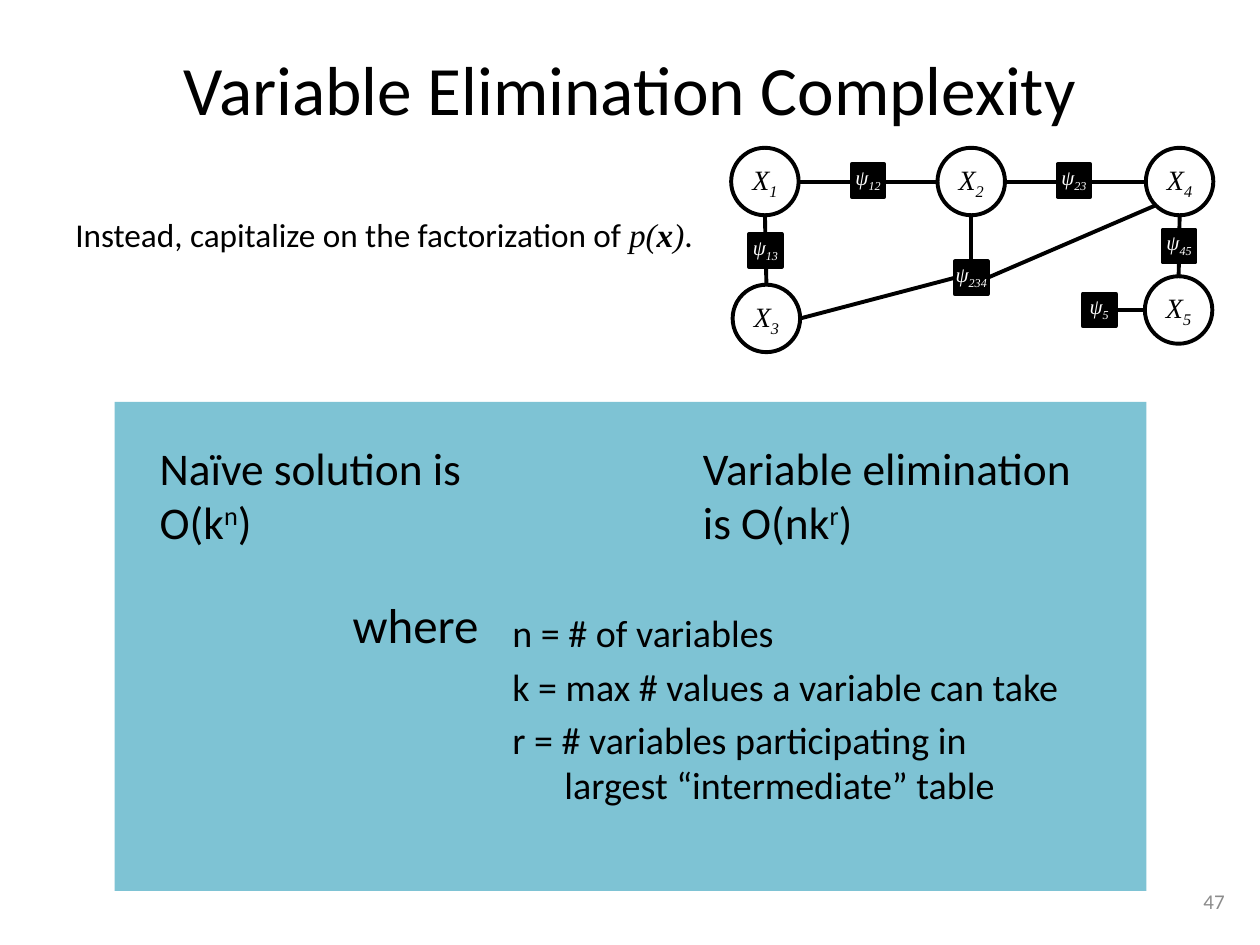
import dataclasses
import pptx
import pptx.util
import pptx.dml.color
import pptx.enum.shapes
import pptx.enum.text
import pptx.oxml

Cm = pptx.util.Cm
Pt = pptx.util.Pt
Kind = pptx.enum.shapes.MSO_SHAPE
Align = pptx.enum.text.PP_ALIGN
Anchor = pptx.enum.text.MSO_ANCHOR


@dataclasses.dataclass(frozen=True)
class Theme:
    sans: str = "Calibri"
    serif: str = "Times New Roman"
    ink: str = "000000"
    paper: str = "FFFFFF"
    panel: str = "7EC3D4"
    muted: str = "8C8C8C"
    title: float = 39.6
    claim: float = 25.9
    where: float = 28
    terms: float = 21.7
    lead: float = 19
    node: float = 16
    small: float = 12
    line: float = 2.25


THEME = Theme()
NODE, FACTOR = 1.36, 0.66
NODES = {"1": (15.42, 3.66), "2": (19.58, 3.66), "3": (15.45, 6.42),
         "4": (23.78, 3.66), "5": (23.76, 6.25)}
FACTORS = {"12": (17.5, 3.64), "23": (21.65, 3.64), "13": (15.43, 5.05),
           "45": (23.77, 4.96), "234": (19.58, 5.6), "5": (22.16, 6.25)}
SIDES = {"top": (0, -0.5), "bottom": (0, 0.5), "left": (-0.5, 0),
         "right": (0.5, 0), "corner": (-0.35, 0.35)}
LINKS = [("X1", "bottom", "X3", "top"), ("X1", "right", "X2", "left"),
         ("X2", "bottom", "ψ234", "top"), ("X2", "right", "X4", "left"),
         ("X4", "corner", "ψ234", "right"), ("X4", "bottom", "X5", "top"),
         ("X5", "left", "ψ5", "right"), ("ψ234", "left", "X3", "right")]


def color(code):
    return pptx.dml.color.RGBColor.from_string(code)


def style(font, size, ink=THEME.ink, face=THEME.sans):
    font.size, font.name = Pt(size), face
    font.color.rgb = color(ink)


def add_run(para, text, base=0):
    run = para.add_run()
    run.text = text
    if base:
        run._r.get_or_add_rPr().set("baseline", str(base * 1000))
    return run


def add_text(slide, box, size, ink=THEME.ink, align=Align.LEFT, anchor=Anchor.TOP):
    frame = slide.shapes.add_textbox(*map(Cm, box)).text_frame
    frame.word_wrap = True
    frame.vertical_anchor = anchor
    para = frame.paragraphs[0]
    para.alignment = align
    style(para.font, size, ink)
    return para


def add_shape(slide, kind, box, fill):
    shape = slide.shapes.add_shape(kind, *map(Cm, box))
    shape.shadow.inherit = False
    shape.fill.solid()
    shape.fill.fore_color.rgb = color(fill)
    shape.line.fill.background()
    return shape


def add_mark(slide, kind, spot, side, name, sub, size, fill, ink, anchor):
    x, y = spot
    shape = add_shape(slide, kind, (x - side / 2, y - side / 2, side, side), fill)
    shape.line.color.rgb = color(THEME.ink)
    shape.line.width = Pt(THEME.line)
    frame = shape.text_frame
    frame.margin_left = frame.margin_right = 0
    frame.margin_top = frame.margin_bottom = 0
    frame.word_wrap = False
    frame.vertical_anchor = anchor
    para = frame.paragraphs[0]
    para.alignment = Align.CENTER
    style(para.font, size, ink, THEME.serif)
    para.font.italic = True
    add_run(para, name)
    add_run(para, sub, -25)


def find_end(name, side):
    spots, size = (NODES, NODE) if name[0] == "X" else (FACTORS, FACTOR)
    x, y = spots[name[1:]]
    dx, dy = SIDES[side]
    return Cm(x + dx * size), Cm(y + dy * size)


def add_link(slide, head, head_side, tail, tail_side):
    link = slide.shapes.add_connector(
        pptx.enum.shapes.MSO_CONNECTOR.STRAIGHT,
        *find_end(head, head_side), *find_end(tail, tail_side))
    link.line.color.rgb = color(THEME.ink)
    link.line.width = Pt(THEME.line)
    link._element.spPr.append(pptx.oxml.parse_xml(
        '<a:effectLst xmlns:a="http://schemas.openxmlformats.org/drawingml/2006/main"/>'))


def add_graph(slide):
    for link in LINKS:
        add_link(slide, *link)
    for sub, spot in NODES.items():
        add_mark(slide, Kind.OVAL, spot, NODE, "X", sub, THEME.node,
                 THEME.paper, THEME.ink, Anchor.MIDDLE)
    for sub, spot in FACTORS.items():
        add_mark(slide, Kind.RECTANGLE, spot, FACTOR, "ψ", sub, THEME.small,
                 THEME.ink, THEME.paper, Anchor.TOP)


def add_claim(slide, left, text, power):
    para = add_text(slide, (left, 8.74, 8.56, 3.38), THEME.claim)
    add_run(para, text)
    add_run(para, power, 30)
    add_run(para, ")")


def add_lead(slide):
    para = add_text(slide, (1.27, 4.19, 13.11, 1.75), THEME.lead)
    add_run(para, "Instead, capitalize on the factorization of ")
    for text in ("p(", "x", ")"):
        font = add_run(para, text).font
        font.name, font.italic = THEME.serif, True
        font.bold = text == "x"
    add_run(para, ".")


def add_terms(slide):
    para = add_text(slide, (10.08, 12.17, 12.4, 4.57), THEME.terms)
    para.text = "n = # of variables"
    frame = para._parent
    for text in ("k = max # values a variable can take",
                 "r = # variables participating in\vlargest “intermediate” table"):
        para = frame.add_paragraph()
        para.text = text
        para.space_before = Pt(THEME.terms * 0.2)
        style(para.font, THEME.terms)
    props = para._p.get_or_add_pPr()
    props.set("marL", str(Cm(1.05)))
    props.set("indent", str(-Cm(1.05)))


def main():
    deck = pptx.Presentation()
    deck.slide_width, deck.slide_height = Cm(25.4), Cm(19.05)
    slide = deck.slides.add_slide(deck.slide_layouts[6])
    add_shape(slide, Kind.RECTANGLE, (2.31, 8.1, 20.8, 9.86), THEME.panel)
    add_text(slide, (1.27, 0.76, 22.86, 2.01), THEME.title, align=Align.CENTER,
             anchor=Anchor.MIDDLE).text = "Variable Elimination Complexity"
    add_claim(slide, 2.97, "Naïve solution is O(k", "n")
    add_claim(slide, 13.92, "Variable elimination is O(nk", "r")
    add_text(slide, (22.53, 17.65, 2.41, 1.02), THEME.small, THEME.muted,
             Align.RIGHT, Anchor.MIDDLE).text = "47"
    add_graph(slide)
    add_lead(slide)
    add_text(slide, (6.86, 11.86, 8.56, 3.38), THEME.where).text = "where"
    add_terms(slide)
    deck.save("out.pptx")


if __name__ == "__main__":
    main()
